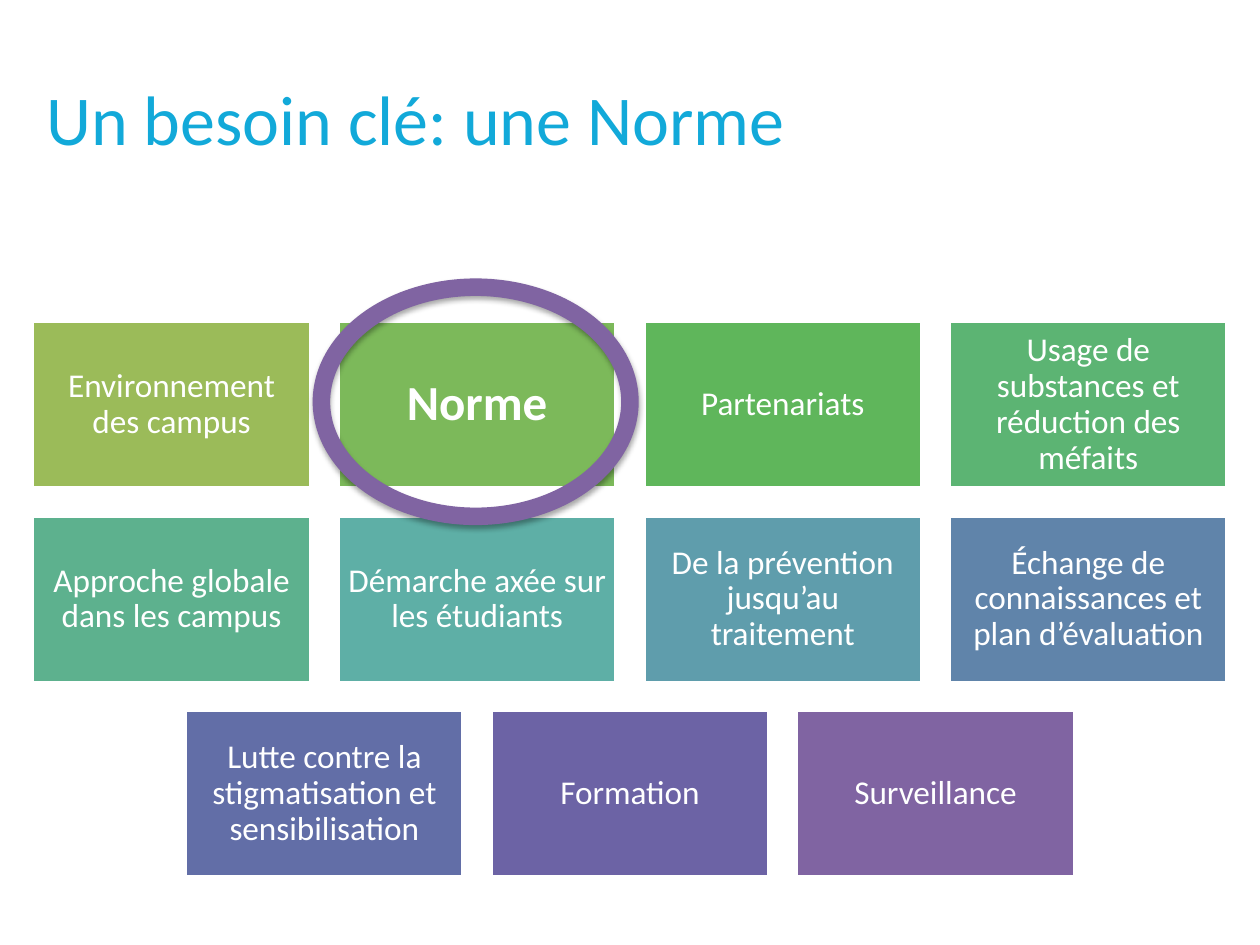
from lxml import etree
from pptx import Presentation
from pptx.dml.color import RGBColor
from pptx.enum.shapes import MSO_SHAPE
from pptx.enum.text import MSO_ANCHOR, PP_ALIGN
from pptx.oxml.ns import qn
from pptx.util import Cm, Pt

RECT, OVAL = MSO_SHAPE.RECTANGLE, MSO_SHAPE.OVAL
TOP, MIDDLE = MSO_ANCHOR.TOP, MSO_ANCHOR.MIDDLE
LEFT, CENTER = PP_ALIGN.LEFT, PP_ALIGN.CENTER

FONT = "Calibri"
COLORS = {"title": "12A9D9", "white": "FFFFFF", "ring": "8064A2", "shadow": "000000"}
PER_ROW, TILE_W, TILE_H, GAP = 4, 5.6, 3.36, 0.56
BODY = {"size": Pt(19), "bold": False}
EMPHASIS = {"size": Pt(28), "bold": True}
TILES = [
    ("Environnement des campus", "9BBB59"),
    ("Norme", "7CB95A"),
    ("Partenariats", "5FB65B"),
    ("Usage de substances et réduction des méfaits", "5CB473"),
    ("Approche globale dans les campus", "5DB18E"),
    ("Démarche axée sur les étudiants", "5EAFA6"),
    ("De la prévention jusqu’au traitement", "5F9DAC"),
    ("Échange de connaissances et plan d’évaluation", "6084AA"),
    ("Lutte contre la stigmatisation et sensibilisation", "626EA7"),
    ("Formation", "6C63A5"),
    ("Surveillance", "8064A2"),
]


def apply(obj, fmt):
    for name, value in fmt.items():
        setattr(obj, name, value)


def write(sp, text, color, frame, para, font):
    tf = sp.text_frame
    apply(tf, {"word_wrap": True, **frame})
    p = tf.paragraphs[0]
    apply(p, para)
    r = p.add_run()
    r.text = text
    apply(r.font, {"name": FONT, **font})
    r.font.color.rgb = RGBColor.from_string(color)


def add_outlined(s, kind, box, line, width):
    sp = s.shapes.add_shape(kind, *map(Cm, box))
    sp.shadow.inherit = False
    sp.line.color.rgb = RGBColor.from_string(line)
    sp.line.width = Pt(width)
    return sp


def add_title(s, box):
    sp = s.shapes.add_textbox(*map(Cm, box))
    write(sp, "Un besoin clé: une Norme", COLORS["title"],
          {"vertical_anchor": TOP}, {"alignment": LEFT}, {"size": Pt(40)})


def add_tile(s, box, text, fill):
    sp = add_outlined(s, RECT, box, COLORS["white"], 2)
    sp.fill.solid()
    sp.fill.fore_color.rgb = RGBColor.from_string(fill)
    font, inset = (EMPHASIS, 0.3) if text == "Norme" else (BODY, 0.2)
    frame = {f"margin_{side}": Cm(inset) for side in ("left", "top", "right", "bottom")}
    write(sp, text, COLORS["white"], {"vertical_anchor": MIDDLE, **frame},
          {"alignment": CENTER, "line_spacing": 0.9}, font)


def add_grid(s, box):
    left, top, width, _ = box
    for start in range(0, len(TILES), PER_ROW):
        row = TILES[start:start + PER_ROW]
        row_w = len(row) * (TILE_W + GAP) - GAP
        x = left + (width - row_w) / 2
        y = top + start // PER_ROW * (TILE_H + GAP)
        for i, (text, fill) in enumerate(row):
            add_tile(s, (x + i * (TILE_W + GAP), y, TILE_W, TILE_H), text, fill)


def add_ring(s, box):
    sp = add_outlined(s, OVAL, box, COLORS["ring"], 10)
    sp.fill.background()
    effects = sp._element.spPr.find(qn("a:effectLst"))
    shadow = etree.SubElement(effects, qn("a:outerShdw"), blurRad=str(Pt(3.1)),
                              dist=str(Pt(1.8)), dir="5400000", rotWithShape="0")
    color = etree.SubElement(shadow, qn("a:srgbClr"), val=COLORS["shadow"])
    etree.SubElement(color, qn("a:alpha"), val="35000")


def main():
    prs = Presentation()
    prs.slide_width, prs.slide_height = Cm(25.4), Cm(19.05)
    s = prs.slides.add_slide(prs.slide_layouts[6])
    add_title(s, (0.69, 1.4, 17.96, 3.2))
    add_grid(s, (0.66, 6.48, 24.08, 11.2))
    add_ring(s, (6.48, 5.79, 6.22, 4.62))
    prs.save("out.pptx")


if __name__ == "__main__":
    main()
